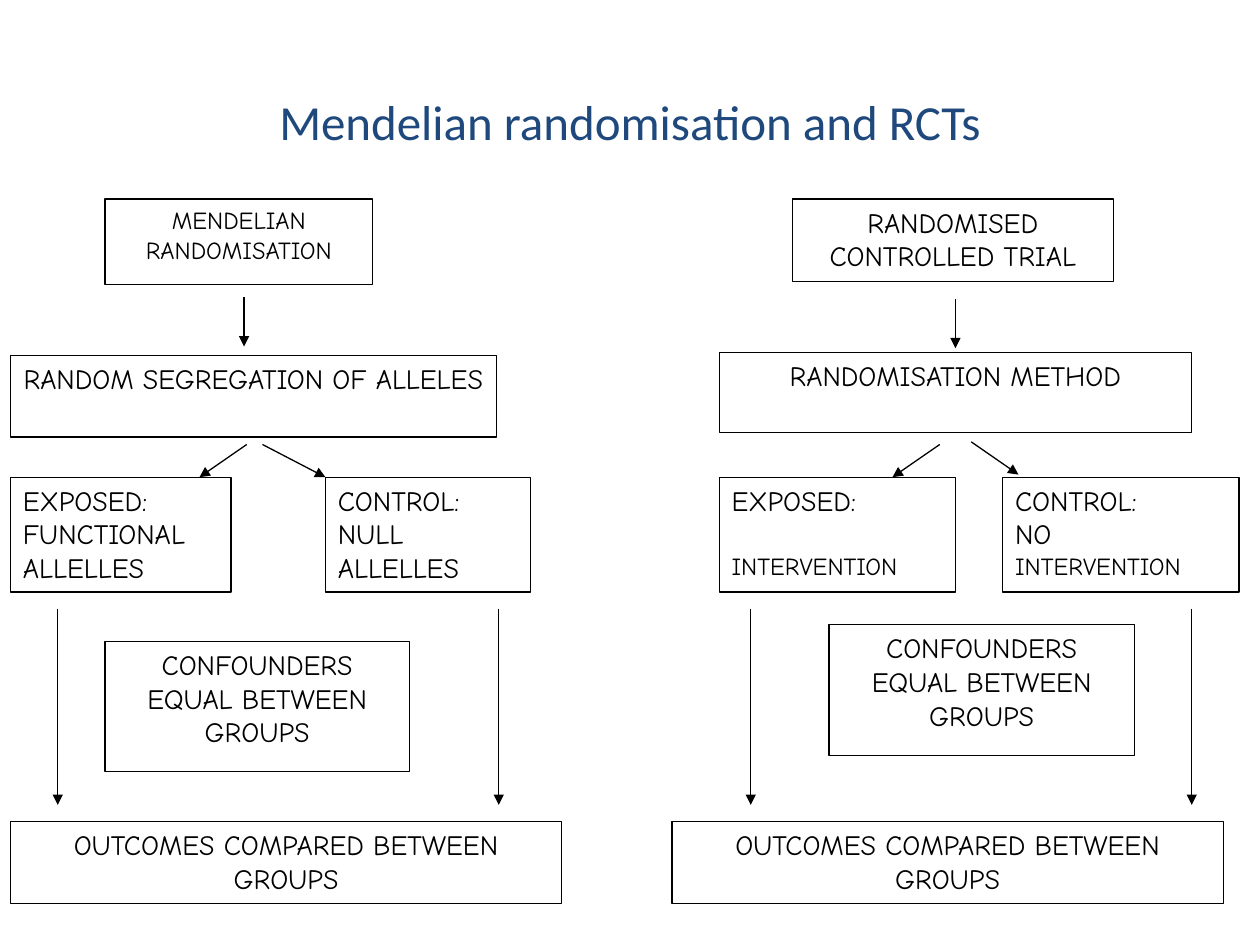
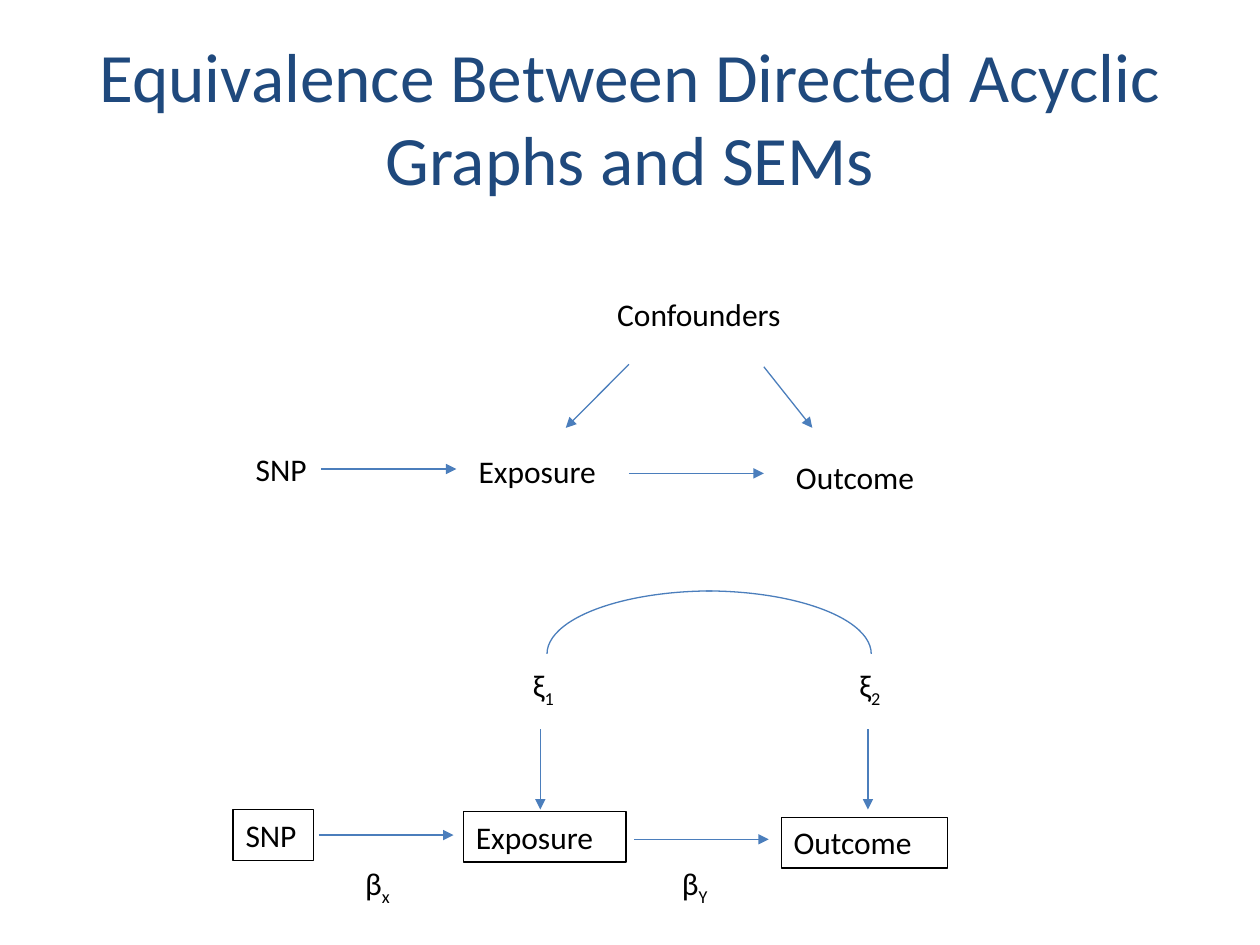
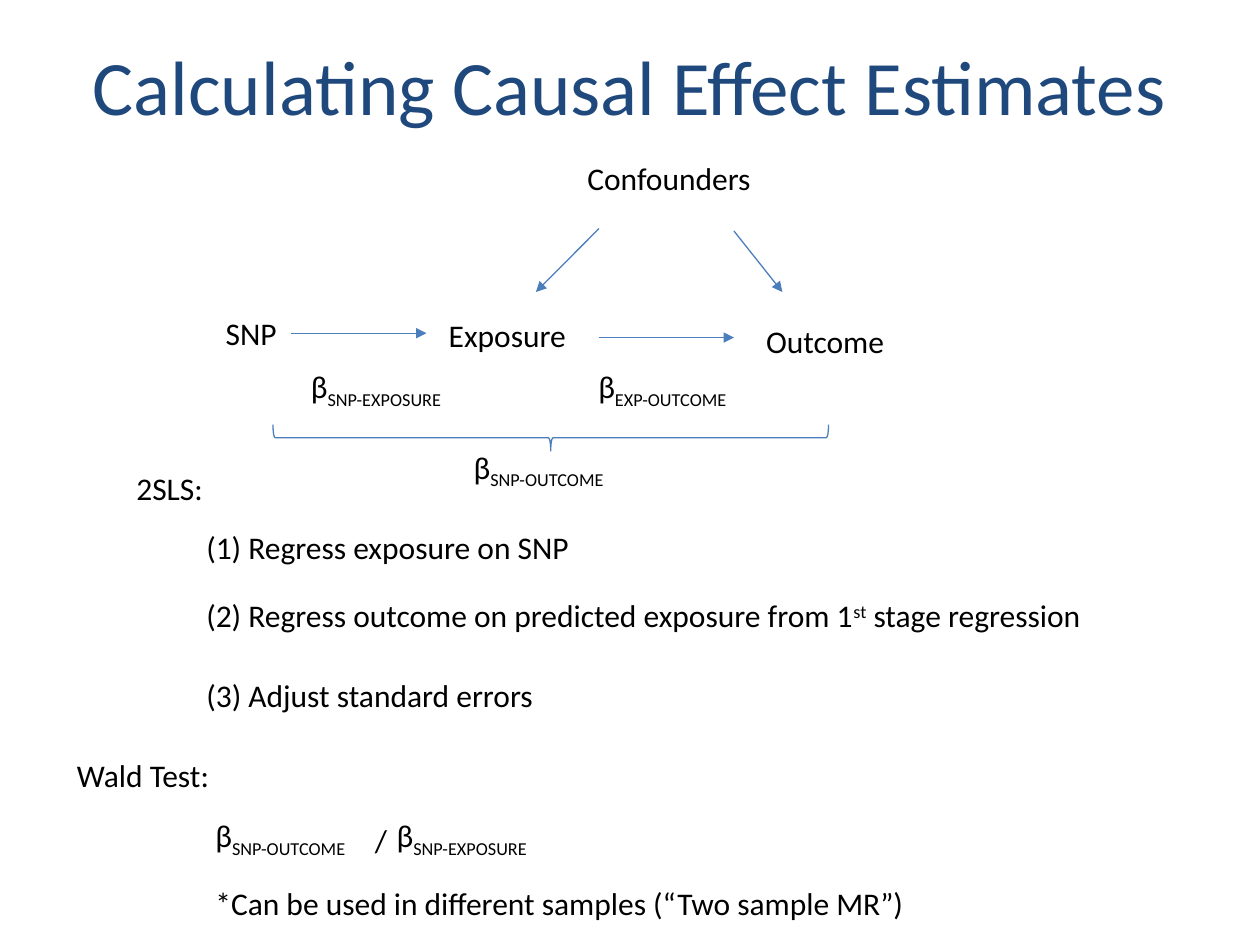
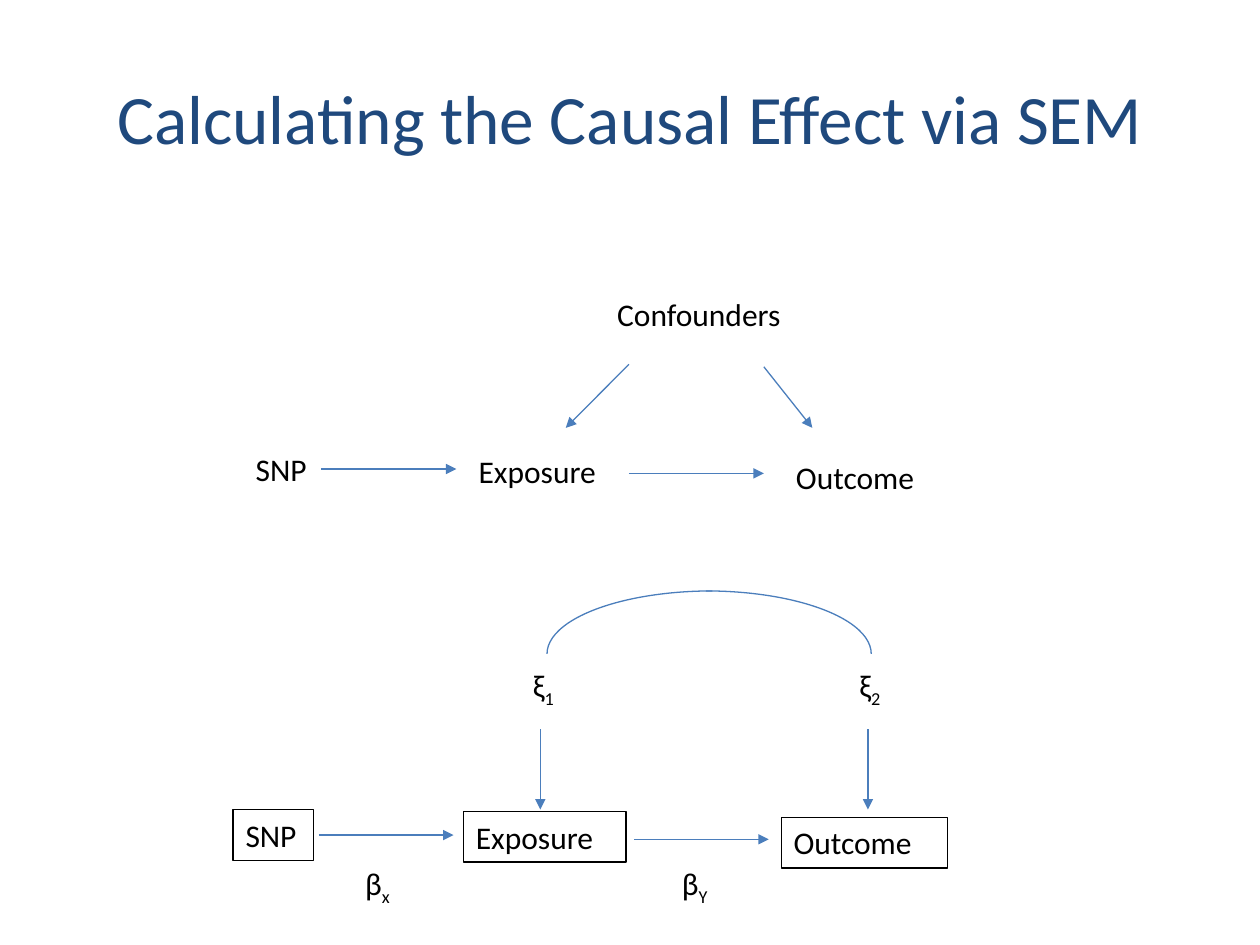
"""Build four slides that explain Mendelian randomisation with flow charts and path diagrams."""
from typing import NamedTuple

from lxml.etree import SubElement
from pptx import Presentation
from pptx.dml.color import RGBColor
from pptx.enum.shapes import MSO_CONNECTOR, MSO_SHAPE as Preset
from pptx.enum.text import MSO_ANCHOR as Anchor, MSO_AUTO_SIZE as AutoSize, PP_ALIGN as Align
from pptx.oxml.ns import qn
from pptx.util import Pt

COLORS = {"title": "1F497D", "ink": "000000", "paper": "FFFFFF", "path": "4B7EBC"}
BODY_FONT, FLOW_FONT = "Calibri", "Comic Neue"
LINE_WIDTH = 0.75
LABEL_SIZE, LABEL_HEIGHT = 18, 29
SUBSCRIPT, SUPERSCRIPT = -25, 30


class Span(NamedTuple):
    text: str
    baseline: int = 0
    size: float | None = None


class Line(NamedTuple):
    spans: tuple[Span, ...]
    size: float = 16
    gap_after: float = 0


class FlowBox(NamedTuple):
    left: float
    top: float
    width: float
    height: float
    lines: tuple[Line, ...]
    align: Align = Align.CENTER


class Label(NamedTuple):
    left: float
    top: float
    width: float
    spans: tuple[Span, ...]
    wrap: bool = False


class Arrow(NamedTuple):
    x1: float
    y1: float
    x2: float
    y2: float


def plain(text: str) -> tuple[Span, ...]:
    """Wrap unformatted text as spans."""
    return (Span(text),)


def indexed(symbol: str, index: str) -> tuple[Span, ...]:
    """Return a symbol followed by its subscript."""
    return Span(symbol), Span(index, SUBSCRIPT)


def line(text: str, size: float = 16, gap_after: float = 0) -> Line:
    """Return a line of unformatted text."""
    return Line(plain(text), size, gap_after)


CONFOUNDERS = (line("CONFOUNDERS EQUAL BETWEEN GROUPS"),)
OUTCOMES = (line("OUTCOMES COMPARED BETWEEN GROUPS"),)

FLOW_BOXES = (
    FlowBox(411, 201.4, 270, 45.8, (line("RANDOMISATION METHOD"),)),
    FlowBox(452.8, 113.8, 183.4, 47, (line("RANDOMISED CONTROLLED TRIAL"),)),
    FlowBox(60, 366.5, 174, 74.6, CONFOUNDERS),
    FlowBox(60, 113.8, 153, 48.8, (line("MENDELIAN RANDOMISATION", 14),)),
    FlowBox(6, 203, 277.7, 46.8, (line("RANDOM SEGREGATION OF ALLELES"),)),
    FlowBox(473.8, 357, 174.4, 74.6, CONFOUNDERS),
    FlowBox(6, 272.7, 126, 65.6, (line("EXPOSED: FUNCTIONAL ALLELLES"),), Align.LEFT),
    FlowBox(411, 272.7, 135, 65.6,
            (line("EXPOSED:", gap_after=19.2), line("INTERVENTION", 14)), Align.LEFT),
    FlowBox(186, 272.7, 117, 65.6, (line("CONTROL: NULL ALLELLES"),), Align.LEFT),
    FlowBox(573, 272.7, 135, 65.6,
            (line("CONTROL:"), Line((Span("NO "), Span("INTERVENTION", size=14)))), Align.LEFT),
    FlowBox(6, 469.4, 315, 46.8, OUTCOMES),
    FlowBox(384, 469.4, 315, 46.8, OUTCOMES),
)
FLOW_ARROWS = (
    Arrow(139.5, 170, 139.5, 198),
    Arrow(546, 171, 546, 199),
    Arrow(150, 254, 186, 272.7),
    Arrow(141, 254, 114, 272.7),
    Arrow(537, 254, 510, 272.7),
    Arrow(555, 252.5, 582, 271.2),
    *(Arrow(x, 347.8, x, 460) for x in (33, 285, 429, 681)),
)

GRAPH_LABELS = (
    Label(139, 253.4, 78, plain("SNP"), True),
    Label(266.4, 254.9, 140, plain("Exposure"), True),
    Label(447.8, 258, 152, plain("Outcome"), True),
    Label(345.6, 164.9, 118, plain("Confounders"), True),
)
GRAPH_ARROWS = (
    Arrow(183.6, 268, 260.8, 268),
    Arrow(359.4, 270.5, 436.5, 270.5),
    Arrow(359.4, 208.2, 323.3, 244.5),
    Arrow(436.5, 209.6, 464.2, 244.5),
)

SEM_BOXES = (
    Label(133.2, 462.6, 46, plain("SNP"), True),
    Label(264.8, 463.6, 93, plain("Exposure"), True),
    Label(446.4, 467, 95.2, plain("Outcome"), True),
)
SEM_LABELS = (
    Label(201.6, 490.3, 29.5, indexed("β", "x")),
    Label(382.5, 490.3, 30.2, indexed("β", "Y")),
    Label(297.4, 377.2, 27.4, indexed("ξ", "1")),
    Label(484, 377.2, 27.4, indexed("ξ", "2")),
)
SEM_ARROWS = (
    Arrow(182.2, 477.2, 259.2, 477.2),
    Arrow(362.3, 479.6, 439.3, 479.6),
    *(Arrow(x, 416.8, x, 462.6) for x in (308.8, 496)),
)

ESTIMATE_LABELS = (
    Label(36.9, 428.4, 95, plain("Wald Test:")),
    Label(70.8, 264.4, 57, plain("2SLS:")),
    Label(116, 463, 100, indexed("β", "SNP-OUTCOME")),
    Label(219.6, 463, 100, indexed("β", "SNP-EXPOSURE")),
    Label(207.2, 465.8, 21.6, plain("/")),
    Label(110.8, 298, 224, plain("(1) Regress exposure on SNP")),
    Label(110.8, 337, 521.3, (Span("(2) Regress outcome on predicted exposure from 1"),
                              Span("st", SUPERSCRIPT), Span(" stage regression"))),
    Label(110.8, 382.5, 203, plain("(3) Adjust standard errors")),
    Label(116, 501.8, 412, plain("*Can be used in different samples (“Two sample MR”)")),
    Label(263.6, 252.2, 100, indexed("β", "SNP-OUTCOME")),
    Label(170.6, 206, 100, indexed("β", "SNP-EXPOSURE")),
    Label(334.8, 206, 98.6, indexed("β", "EXP-OUTCOME")),
)


def rgb(name: str) -> RGBColor:
    """Look up a named colour."""
    return RGBColor.from_string(COLORS[name])


def write(paragraph, spans: tuple[Span, ...], font: str, size: float,
          color: str = "ink", align: Align = Align.LEFT) -> None:
    """Fill a paragraph with spans in one font."""
    paragraph.alignment = align
    paragraph.font.name = font
    paragraph.font.size = Pt(size)
    paragraph.font.color.rgb = rgb(color)
    for span in spans:
        run = paragraph.add_run()
        run.text = span.text
        if span.size:
            run.font.size = Pt(span.size)
        if span.baseline:
            run._r.get_or_add_rPr().set("baseline", f"{span.baseline * 1000}")


def add_outline(page, preset: Preset, left: float, top: float, width: float, height: float,
                color: str = "ink", fill: str | None = None):
    """Draw a preset shape with a thin line and an optional fill."""
    shape = page.shapes.add_shape(preset, Pt(left), Pt(top), Pt(width), Pt(height))
    shape.shadow.inherit = False
    shape.line.color.rgb = rgb(color)
    shape.line.width = Pt(LINE_WIDTH)
    if fill:
        shape.fill.solid()
        shape.fill.fore_color.rgb = rgb(fill)
    else:
        shape.fill.background()
    return shape


def add_title(page, text: str, size: float, top: float = 21.6,
              left: float = 36, width: float = 648) -> None:
    """Write the slide title, centred in its band."""
    box = page.shapes.add_textbox(Pt(left), Pt(top), Pt(width), Pt(90))
    box.text_frame.word_wrap = True
    box.text_frame.vertical_anchor = Anchor.MIDDLE
    write(box.text_frame.paragraphs[0], plain(text), BODY_FONT, size, "title", Align.CENTER)


def add_flow_box(page, item: FlowBox) -> None:
    """Draw one step of the flow chart."""
    shape = add_outline(page, Preset.RECTANGLE, item.left, item.top, item.width, item.height,
                        fill="paper")
    frame = shape.text_frame
    frame.word_wrap = True
    frame.vertical_anchor = Anchor.TOP
    for number, row in enumerate(item.lines):
        paragraph = frame.add_paragraph() if number else frame.paragraphs[0]
        paragraph.space_after = Pt(row.gap_after)
        write(paragraph, row.spans, FLOW_FONT, row.size, align=item.align)


def add_label(page, label: Label, boxed: bool = False) -> None:
    """Write a one-line label, with a frame when boxed."""
    place = label.left, label.top, label.width, LABEL_HEIGHT
    if boxed:
        box = add_outline(page, Preset.RECTANGLE, *place)
    else:
        box = page.shapes.add_textbox(*map(Pt, place))
    frame = box.text_frame
    frame.word_wrap = label.wrap
    frame.auto_size = AutoSize.SHAPE_TO_FIT_TEXT
    frame.vertical_anchor = Anchor.TOP
    write(frame.paragraphs[0], label.spans, BODY_FONT, LABEL_SIZE)


def add_arrow(page, arrow: Arrow, color: str = "path") -> None:
    """Draw a thin straight arrow."""
    connector = page.shapes.add_connector(MSO_CONNECTOR.STRAIGHT, *map(Pt, arrow))
    connector.line.color.rgb = rgb(color)
    connector.line.width = Pt(LINE_WIDTH)
    properties = connector.element.spPr
    SubElement(properties.find(qn("a:ln")), qn("a:tailEnd"), type="triangle")
    SubElement(properties, qn("a:effectLst"))


def add_graph(page, dx: float = 0, dy: float = 0) -> None:
    """Draw the directed acyclic graph, shifted by an offset."""
    for label in GRAPH_LABELS:
        add_label(page, label._replace(left=label.left + dx, top=label.top + dy))
    for x1, y1, x2, y2 in GRAPH_ARROWS:
        add_arrow(page, Arrow(x1 + dx, y1 + dy, x2 + dx, y2 + dy))


def add_sem(page) -> None:
    """Draw the structural equation model with its correlated errors."""
    for box in SEM_BOXES:
        add_label(page, box, boxed=True)
    for label in SEM_LABELS:
        add_label(page, label)
    for arrow in SEM_ARROWS:
        add_arrow(page, arrow)
    add_outline(page, Preset.ARC, 309, 337.7, 188.9, 72, "path")
    left_arc = add_outline(page, Preset.ARC, 312.6, 337.7, 188.9, 72, "path")
    left_arc.element.spPr.find(qn("a:xfrm")).set("flipH", "1")


def build_trial_slide(page) -> None:
    """Compare Mendelian randomisation with a controlled trial."""
    add_title(page, "Mendelian randomisation and RCTs", 28, 24, 54, 612)
    for item in FLOW_BOXES:
        add_flow_box(page, item)
    for arrow in FLOW_ARROWS:
        add_arrow(page, arrow, "ink")


def build_model_slide(page, title: str) -> None:
    """Show the graph above its structural equation model."""
    add_title(page, title, 39.6)
    add_graph(page)
    add_sem(page)


def build_estimate_slide(page) -> None:
    """Show the graph with the two ways of estimating the effect."""
    add_title(page, "Calculating Causal Effect Estimates", 44, 3.6)
    add_graph(page, -17.1, -77.6)
    for label in ESTIMATE_LABELS:
        add_label(page, label)
    brace = add_outline(page, Preset.RIGHT_BRACE, 307.2, 91.4, 15, 317.5, "path")
    brace.rotation = 90


def main() -> None:
    """Build and save the deck."""
    deck = Presentation()
    deck.slide_width, deck.slide_height = Pt(720), Pt(540)
    blank = deck.slide_layouts[6]
    trial, equivalence, estimate, effect = (deck.slides.add_slide(blank) for _ in range(4))
    build_trial_slide(trial)
    build_model_slide(equivalence, "Equivalence Between Directed Acyclic Graphs and SEMs")
    build_estimate_slide(estimate)
    build_model_slide(effect, "Calculating the Causal Effect via SEM")
    deck.save("out.pptx")


if __name__ == "__main__":
    main()
